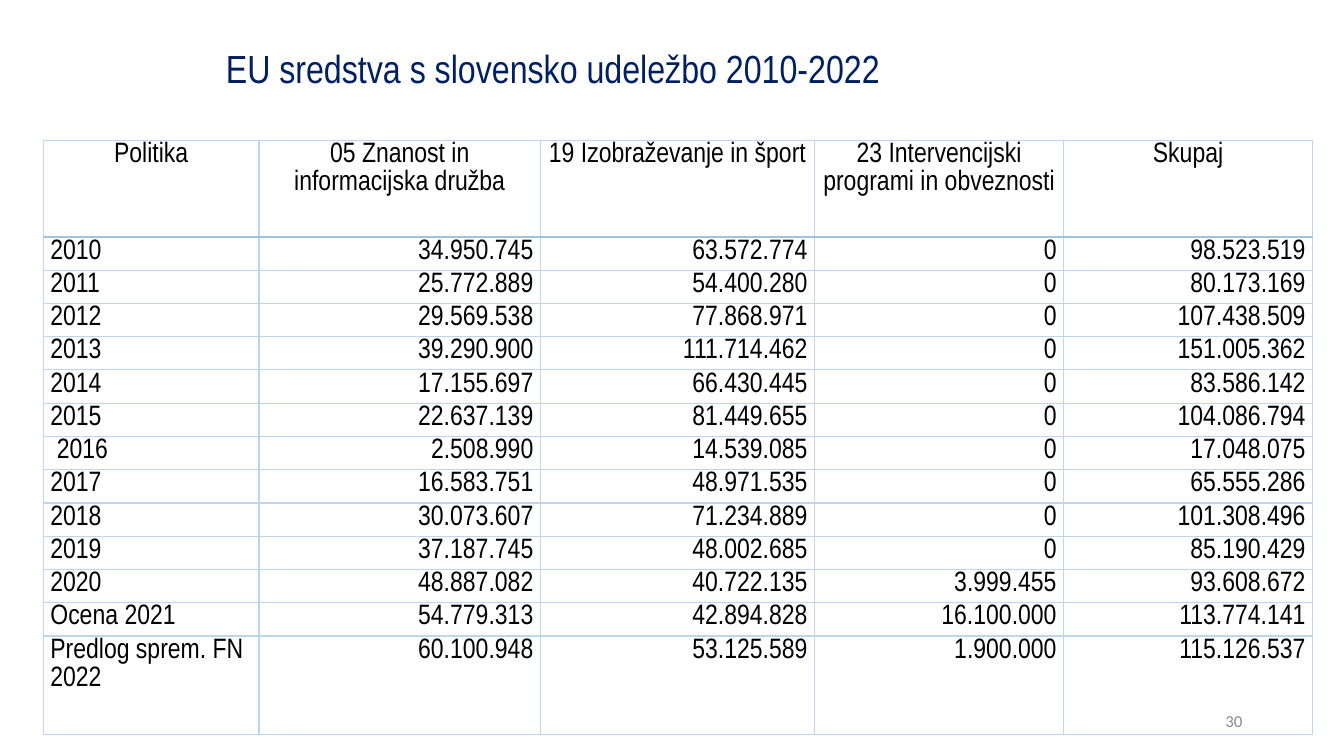
"""Build the slide on EU funds with Slovenian participation, 2010-2022."""
import dataclasses
import typing

import lxml.etree
import pptx
import pptx.dml.color
import pptx.enum.text
import pptx.oxml.ns
import pptx.util

Inches = pptx.util.Inches
Align = pptx.enum.text.PP_ALIGN
Anchor = pptx.enum.text.MSO_ANCHOR

COLUMN_WIDTHS = (2.14, 2.79, 2.72, 2.47, 2.47)
HEADER_HEIGHT, YEAR_HEIGHT, LAST_HEIGHT = 0.96, 0.33, 0.98
GRID_LINE = ("BDD6EE", 1)
HEADER_LINE = ("9CC2E5", 1.5)
CELL_FRAME = {"margin_left": Inches(0.07), "margin_right": Inches(0.07),
              "margin_top": 0, "margin_bottom": 0}


@dataclasses.dataclass(frozen=True)
class TextStyle:
    font: str
    size: float
    color: str
    align: Align = Align.LEFT
    spacing: float = 1.0


@dataclasses.dataclass(frozen=True)
class FundingRow:
    period: str
    science: str
    education: str
    intervention: str
    total: str


TITLE_STYLE = TextStyle("Arial Narrow", 28, "002060", spacing=0.9)
LABEL_STYLE = TextStyle("Arial Narrow", 20, "000000", spacing=1.07)
HEADER_STYLE = dataclasses.replace(LABEL_STYLE, align=Align.CENTER)
AMOUNT_STYLE = dataclasses.replace(LABEL_STYLE, align=Align.RIGHT)
NUMBER_STYLE = TextStyle("Calibri", 12, "8C8C8C", Align.RIGHT)

ROWS = (
    FundingRow("Politika", "05 Znanost in informacijska družba", "19 Izobraževanje in šport",
               "23 Intervencijski programi in obveznosti", "Skupaj"),
    FundingRow("2010", "34.950.745", "63.572.774", "0", "98.523.519"),
    FundingRow("2011", "25.772.889", "54.400.280", "0", "80.173.169"),
    FundingRow("2012", "29.569.538", "77.868.971", "0", "107.438.509"),
    FundingRow("2013", "39.290.900", "111.714.462", "0", "151.005.362"),
    FundingRow("2014", "17.155.697", "66.430.445", "0", "83.586.142"),
    FundingRow("2015", "22.637.139", "81.449.655", "0", "104.086.794"),
    FundingRow(" 2016", "2.508.990", "14.539.085", "0", "17.048.075"),
    FundingRow("2017", "16.583.751", "48.971.535", "0", "65.555.286"),
    FundingRow("2018", "30.073.607", "71.234.889", "0", "101.308.496"),
    FundingRow("2019", "37.187.745", "48.002.685", "0", "85.190.429"),
    FundingRow("2020", "48.887.082", "40.722.135", "3.999.455", "93.608.672"),
    FundingRow("Ocena 2021", "54.779.313", "42.894.828", "16.100.000", "113.774.141"),
    FundingRow("Predlog sprem. FN 2022", "60.100.948", "53.125.589", "1.900.000", "115.126.537"),
)


def set_all(target: typing.Any, values: dict[str, typing.Any]) -> None:
    for name, value in values.items():
        setattr(target, name, value)


def paint(color_format: typing.Any, color: str) -> None:
    color_format.rgb = pptx.dml.color.RGBColor.from_string(color)


def write(frame: typing.Any, text: str, style: TextStyle) -> None:
    para = frame.paragraphs[0]
    set_all(para, {"alignment": style.align, "line_spacing": style.spacing})
    span = para.add_run()
    span.text = text
    set_all(span.font, {"name": style.font, "size": pptx.util.Pt(style.size), "bold": False})
    paint(span.font.color, style.color)


def add_border(cell: typing.Any, side: str, color: str, width: float) -> None:
    qn = pptx.oxml.ns.qn
    properties = cell._tc.get_or_add_tcPr()
    line = lxml.etree.SubElement(properties, qn(f"a:ln{side}"), w=str(int(pptx.util.Pt(width))))
    fill = lxml.etree.SubElement(line, qn("a:solidFill"))
    lxml.etree.SubElement(fill, qn("a:srgbClr"), val=color)


def fill_cell(cell: typing.Any, text: str, row: int, column: int) -> None:
    set_all(cell, CELL_FRAME)
    style = HEADER_STYLE if row == 0 else AMOUNT_STYLE if column else LABEL_STYLE
    write(cell.text_frame, text, style)
    lines = {"L": GRID_LINE, "R": GRID_LINE,
             "T": HEADER_LINE if row == 1 else GRID_LINE,
             "B": HEADER_LINE if row == 0 else GRID_LINE}
    for side, (color, width) in lines.items():
        add_border(cell, side, color, width)
    cell.fill.background()


def add_title(page: typing.Any) -> None:
    title = page.shapes.title
    set_all(title, {"left": Inches(2.14), "top": Inches(0.35),
                    "width": Inches(9.75), "height": Inches(0.71)})
    set_all(title.text_frame, {"vertical_anchor": Anchor.MIDDLE, "word_wrap": True})
    write(title.text_frame, "EU sredstva s slovensko udeležbo 2010-2022", TITLE_STYLE)


def add_funding_table(page: typing.Any) -> None:
    heights = [HEADER_HEIGHT] + [YEAR_HEIGHT] * (len(ROWS) - 2) + [LAST_HEIGHT]
    table = page.shapes.add_table(
        len(ROWS), len(COLUMN_WIDTHS), Inches(0.43), Inches(1.39),
        Inches(sum(COLUMN_WIDTHS)), Inches(sum(heights))).table
    set_all(table, {"first_row": False, "horz_banding": False})
    for column, width in zip(table.columns, COLUMN_WIDTHS):
        column.width = Inches(width)
    for row, (entry, height) in enumerate(zip(ROWS, heights)):
        table.rows[row].height = Inches(height)
        for column, text in enumerate(dataclasses.astuple(entry)):
            fill_cell(table.cell(row, column), text, row, column)


def add_page_number(page: typing.Any) -> None:
    box = page.shapes.add_textbox(Inches(9.42), Inches(6.95), Inches(3), Inches(0.4))
    set_all(box.text_frame, {"vertical_anchor": Anchor.MIDDLE, "word_wrap": True})
    write(box.text_frame, "30", NUMBER_STYLE)


def main() -> None:
    deck = pptx.Presentation()
    set_all(deck, {"slide_width": Inches(13.33), "slide_height": Inches(7.5)})
    page = deck.slides.add_slide(deck.slide_layouts.get_by_name("Title Only"))
    add_title(page)
    add_funding_table(page)
    add_page_number(page)
    deck.save("out.pptx")


if __name__ == "__main__":
    main()
